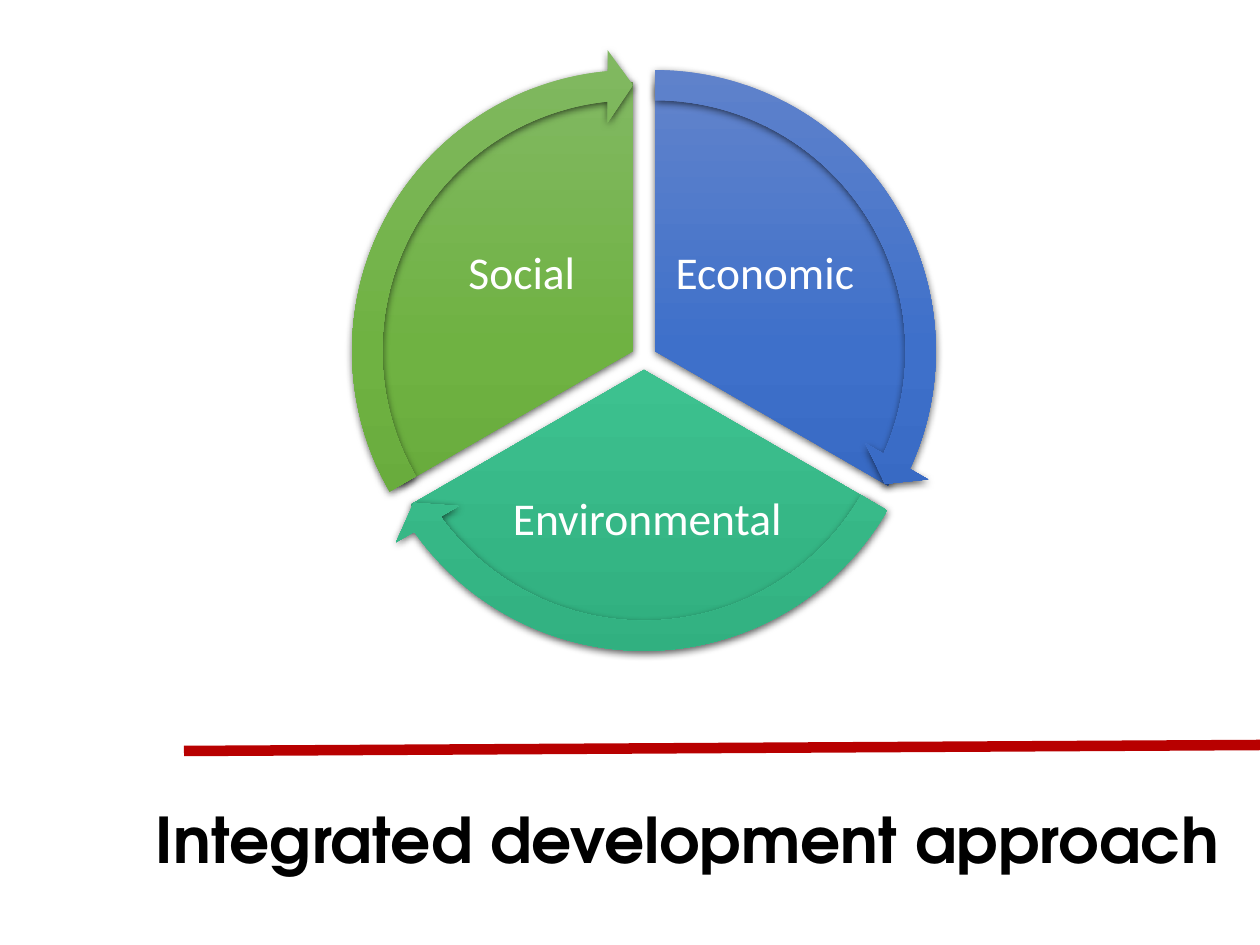
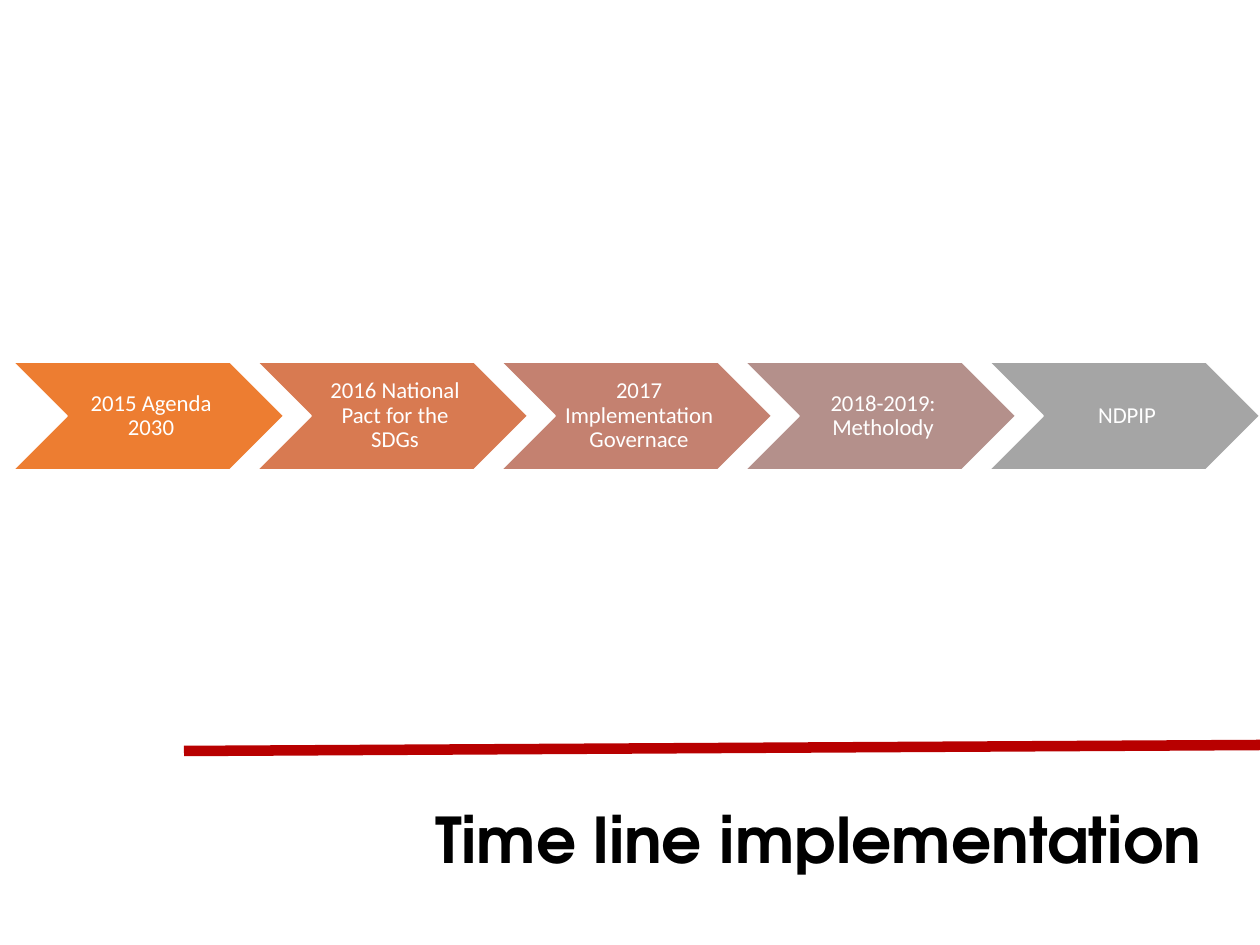
"""Build two slides: a three-part development cycle and an implementation timeline."""
from copy import deepcopy
from dataclasses import dataclass

from lxml import etree
from pptx import Presentation
from pptx import util as u
from pptx.dml.color import RGBColor
from pptx.enum import shapes, text
from pptx.oxml.ns import qn

PX = 914400 / 126


@dataclass(frozen=True)
class Theme:
    title_font: str = "TeX Gyre Adventor"
    body_font: str = "Calibri"
    title_size: int = 36
    cycle_size: int = 26
    step_size: int = 13
    ink: str = "000000"
    paper: str = "FFFFFF"
    rule: str = "B80000"
    rule_width: int = 6


THEME = Theme()
CYCLE_TITLE = ("Integrated development approach", 106)
TIMELINE_TITLE = ("Time line implementation ", 154)
TITLE_TOP, TITLE_RIGHT, TITLE_HEIGHT = 780, 1232, 116
RULE_ENDS = (184, 751, 1260, 745)

PIE_SIZE, ARROW_MARGIN = 538, 33
ARROW_THICKNESS, ARROW_TIP, ARROW_HEAD = 0.05, 3.28, 0.06
SECTORS = [
    {"label": "Economic", "corner": (386, 82), "angles": (270, 30),
     "label_area": (669, 195, 192, 160), "colors": ("6183CB", "3E70CA", "3062BB")},
    {"label": "Environmental", "corner": (375, 101), "angles": (30, 150),
     "label_area": (503, 450, 289, 141), "colors": ("60C39A", "3DC18F", "31B080")},
    {"label": "Social", "corner": (364, 82), "angles": (150, 270),
     "label_area": (426, 195, 192, 160), "colors": ("81B861", "6FB242", "62A336")},
]

STEPS = [
    ("2015 Agenda 2030", "ED7D31"),
    ("2016 National Pact for the SDGs", "D87A51"),
    ("2017 Implementation Governace", "C48170"),
    ("2018-2019: Metholody", "B4908B"),
    ("NDPIP", "A5A5A5"),
]
STEP_LEFT, STEP_TOP, STEP_WIDTH, STEP_HEIGHT, STEP_PITCH = 13, 362, 271, 108, 244


def px(*lengths):
    return [u.Emu(round(length * PX)) for length in lengths]


def write(box, words, *, size, font=THEME.body_font, color=THEME.paper, bold=False,
          align=text.PP_ALIGN.CENTER, spacing=0.9, insets=(5, 5, 5, 5)):
    frame = box.text_frame
    frame.word_wrap = True
    frame.auto_size = text.MSO_AUTO_SIZE.NONE
    frame.vertical_anchor = text.MSO_ANCHOR.MIDDLE
    (frame.margin_left, frame.margin_top,
     frame.margin_right, frame.margin_bottom) = px(*insets)
    para = frame.paragraphs[0]
    para.alignment = align
    para.line_spacing = spacing
    span = para.add_run()
    span.text = words
    span.font.name = font
    span.font.size = u.Pt(size)
    span.font.bold = bold
    span.font.color.rgb = RGBColor.from_string(color)


def add_page(deck, words, left):
    page = deck.slides.add_slide(deck.slide_layouts[5])
    rule = page.shapes.add_connector(shapes.MSO_CONNECTOR.STRAIGHT, *px(*RULE_ENDS))
    rule.line.color.rgb = RGBColor.from_string(THEME.rule)
    rule.line.width = u.Pt(THEME.rule_width)
    etree.SubElement(rule._element.spPr, qn("a:effectLst"))
    title = page.shapes.title
    title.left, title.top, title.width, title.height = px(
        left, TITLE_TOP, TITLE_RIGHT - left, TITLE_HEIGHT)
    write(title, words, size=THEME.title_size, font=THEME.title_font, color=THEME.ink,
          bold=True, align=text.PP_ALIGN.RIGHT, spacing=1.0, insets=(13, 6, 13, 6))
    return page


def add_label(page, words, area, **style):
    write(page.shapes.add_textbox(*px(*area)), words, **style)


def shade(shape, colors):
    shape.fill.gradient()
    shape.fill.gradient_angle = 270
    first = shape._element.spPr.find(qn("a:gradFill")).find(qn("a:gsLst"))[0]
    first.addnext(deepcopy(first))
    for stop, position, color in zip(shape.fill.gradient_stops, (0, 0.5, 1), colors):
        stop.position = position
        stop.color.rgb = RGBColor.from_string(color)
    shape.line.fill.background()


def cast_shadow(shape):
    shape.shadow.inherit = False
    effects = shape._element.spPr.find(qn("a:effectLst"))
    shadow = etree.SubElement(effects, qn("a:outerShdw"), blurRad=str(u.Pt(4.5)),
                              dist=str(u.Pt(1.5)), dir="5400000", rotWithShape="0")
    color = etree.SubElement(shadow, qn("a:srgbClr"), val=THEME.ink)
    etree.SubElement(color, qn("a:alpha"), val="63000")


def add_cycle_part(page, kind, corner, size, adjustments, colors):
    part = page.shapes.add_shape(kind, *px(*corner, size, size))
    for index, value in enumerate(adjustments):
        part.adjustments[index] = value
    shade(part, colors)
    cast_shadow(part)


def build_cycle(deck):
    page = add_page(deck, *CYCLE_TITLE)
    for sector in SECTORS:
        turns = [angle * 0.6 for angle in sector["angles"]]
        add_cycle_part(page, shapes.MSO_SHAPE.PIE, sector["corner"], PIE_SIZE,
                       turns, sector["colors"])
        add_label(page, sector["label"], sector["label_area"], size=THEME.cycle_size)
    for sector in SECTORS:
        start, end = [angle * 0.6 for angle in sector["angles"]]
        corner = [edge - ARROW_MARGIN for edge in sector["corner"]]
        bend = (ARROW_THICKNESS, ARROW_TIP, end - ARROW_TIP, start, ARROW_HEAD)
        add_cycle_part(page, shapes.MSO_SHAPE.CIRCULAR_ARROW, corner,
                       PIE_SIZE + 2 * ARROW_MARGIN, bend, sector["colors"])


def build_timeline(deck):
    page = add_page(deck, *TIMELINE_TITLE)
    notch = STEP_HEIGHT // 2
    for index, (words, color) in enumerate(STEPS):
        left = STEP_LEFT + index * STEP_PITCH
        step = page.shapes.add_shape(
            shapes.MSO_SHAPE.CHEVRON, *px(left, STEP_TOP, STEP_WIDTH, STEP_HEIGHT))
        step.shadow.inherit = False
        step.fill.solid()
        step.fill.fore_color.rgb = RGBColor.from_string(color)
        step.line.color.rgb = RGBColor.from_string(THEME.paper)
        step.line.width = u.Pt(1)
        area = (left + notch, STEP_TOP, STEP_WIDTH - 2 * notch, STEP_HEIGHT)
        add_label(page, words, area, size=THEME.step_size, insets=(8, 3, 3, 3))


def main():
    deck = Presentation()
    deck.slide_width, deck.slide_height = px(1260, 945)
    build_cycle(deck)
    build_timeline(deck)
    deck.save("out.pptx")


if __name__ == "__main__":
    main()
